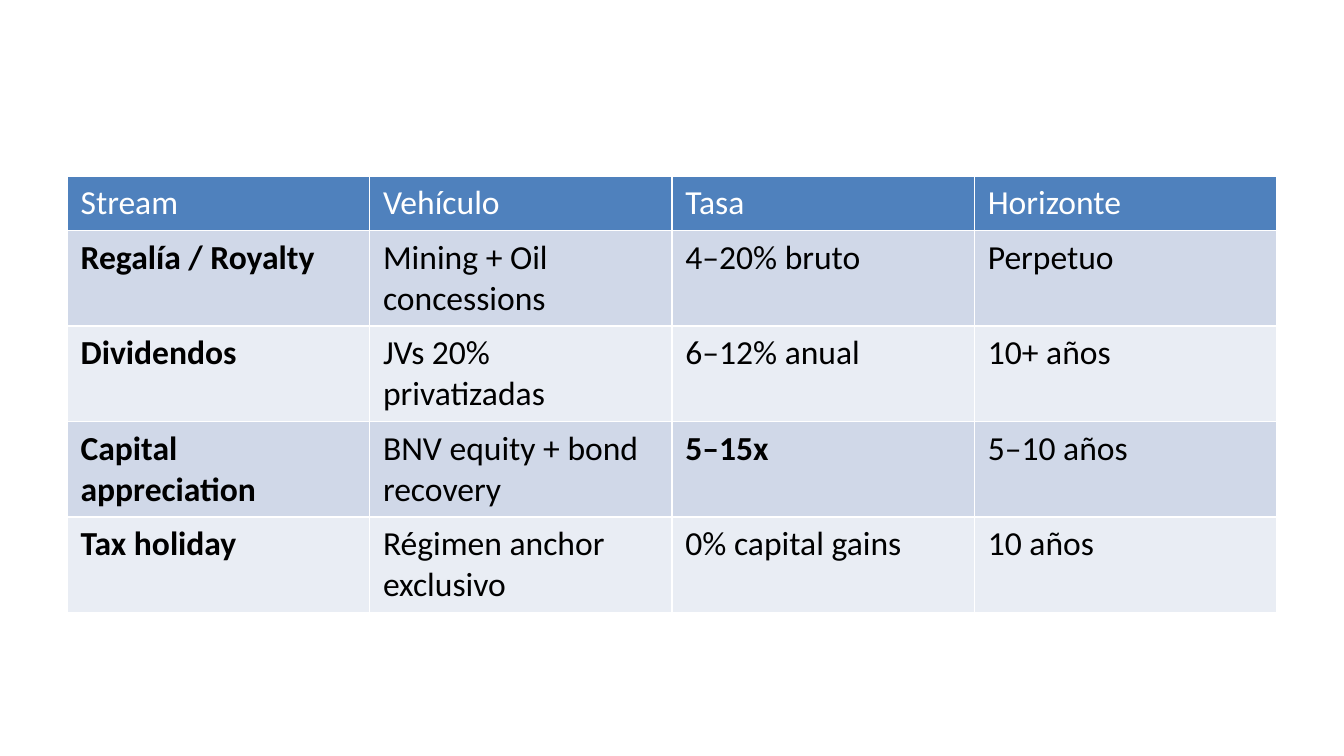
import pptx
import pptx.dml.color
import pptx.oxml.ns
import pptx.util
from lxml import etree

Inches = pptx.util.Inches
Pt = pptx.util.Pt

HEADERS = ["Stream", "Vehículo", "Tasa", "Horizonte"]
STREAMS = [
    ["Regalía / Royalty", "Mining + Oil concessions", "4–20% bruto", "Perpetuo"],
    ["Dividendos", "JVs 20% privatizadas", "6–12% anual", "10+ años"],
    ["Capital appreciation", "BNV equity + bond recovery", "5–15x", "5–10 años"],
    ["Tax holiday", "Régimen anchor exclusivo", "0% capital gains", "10 años"],
]
HIGHLIGHT = "5–15x"


def color(value):
    return pptx.dml.color.RGBColor.from_string(value)


def write_text(frame, text, *, size, font, fill, bold=False):
    paragraph = frame.paragraphs[0]
    run = paragraph.add_run()
    run.text = text
    run.font.size = Pt(size)
    run.font.name = font
    run.font.bold = bold
    run.font.color.rgb = color(fill)


class SlideBuilder:
    font = "Calibri"
    text_size = 18
    header_fill = "4F81BD"
    band_fills = ("D0D8E8", "E9EDF4")
    border_color = "FFFFFF"
    border_width = 1

    def __init__(self, slide):
        self.slide = slide

    def border(self, cell):
        properties = cell._tc.get_or_add_tcPr()
        for side in ("L", "R", "T", "B"):
            line = etree.SubElement(properties, pptx.oxml.ns.qn(f"a:ln{side}"),
                                    w=str(Pt(self.border_width)))
            solid = etree.SubElement(line, pptx.oxml.ns.qn("a:solidFill"))
            etree.SubElement(solid, pptx.oxml.ns.qn("a:srgbClr"), val=self.border_color)

    def cell(self, cell, text, fill, text_color, bold=False):
        self.border(cell)
        cell.fill.solid()
        cell.fill.fore_color.rgb = color(fill)
        write_text(cell.text_frame, text, size=self.text_size, font=self.font,
                   fill=text_color, bold=bold)

    def table(self, left, top, width, headers, rows, header_height, row_height):
        height = header_height + row_height * len(rows)
        table = self.slide.shapes.add_table(
            len(rows) + 1, len(headers), Inches(left), Inches(top),
            Inches(width), Inches(height)).table
        for column in table.columns:
            column.width = Inches(width / len(headers))

        # Header row
        table.rows[0].height = Inches(header_height)
        for column, text in enumerate(headers):
            self.cell(table.cell(0, column), text, self.header_fill, "FFFFFF")

        # Banded body rows
        for index, texts in enumerate(rows):
            table.rows[index + 1].height = Inches(row_height)
            for column, text in enumerate(texts):
                self.cell(table.cell(index + 1, column), text,
                          self.band_fills[index % 2], "000000",
                          bold=column == 0 or text == HIGHLIGHT)


def main():
    # Widescreen 16:9 page
    presentation = pptx.Presentation()
    presentation.slide_width = Inches(10)
    presentation.slide_height = Inches(10 * 9 / 16)
    slide = presentation.slides.add_slide(presentation.slide_layouts[6])

    # Income streams table
    builder = SlideBuilder(slide)
    builder.table(0.5, 1.31, 9, HEADERS, STREAMS, header_height=0.4, row_height=0.71)

    presentation.save("out.pptx")


if __name__ == "__main__":
    main()
